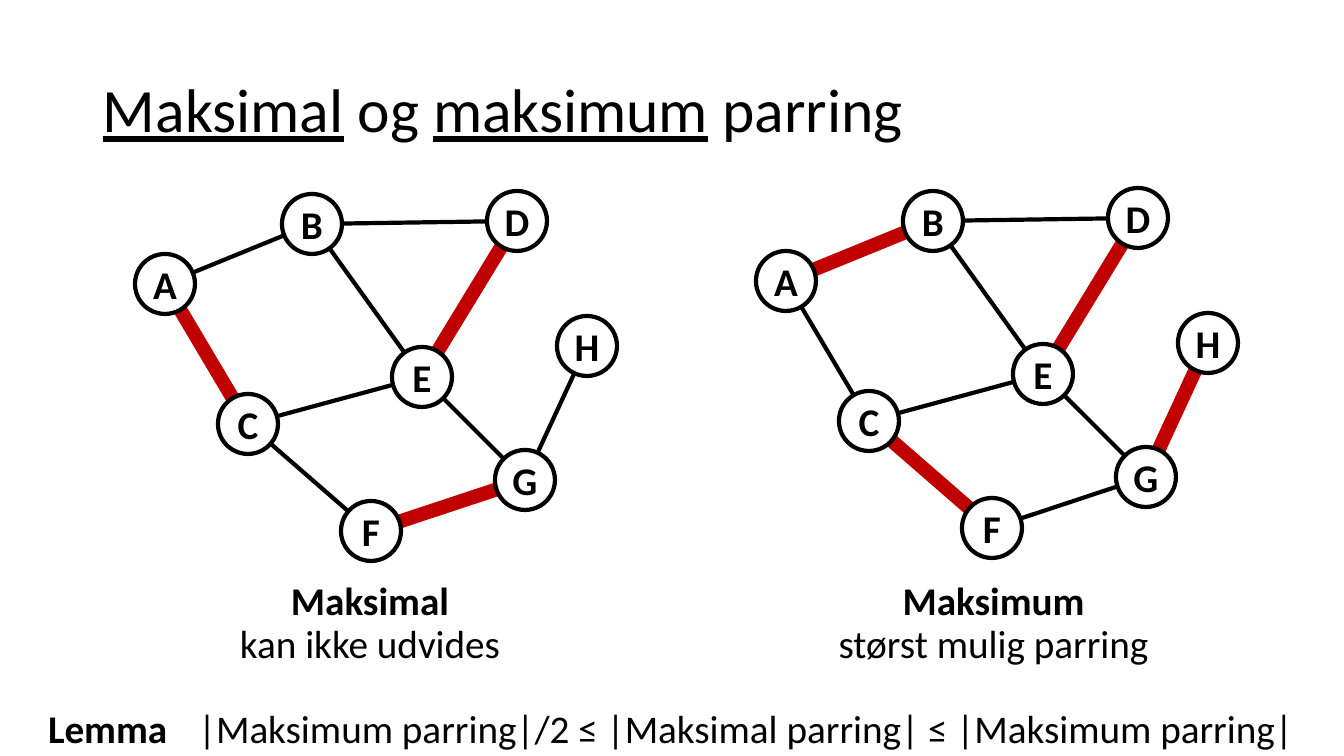
from lxml.etree import SubElement
from pptx import Presentation
from pptx.dml.color import RGBColor
from pptx.enum.shapes import MSO_CONNECTOR as Conn, MSO_SHAPE as Shape
from pptx.enum.text import MSO_ANCHOR as Anchor, PP_ALIGN as Align
from pptx.oxml.ns import qn
from pptx.util import Pt

TITLE = [("Maksimal", True), (" og ", False), ("maksimum", True), (" parring", False)]
LEMMA = [("Lemma", True), ("\t|Maksimum parring|/2 ≤ |Maksimal parring| ≤ |Maksimum parring|", False)]
NODES = {
    "A": (165, 284), "B": (312, 224), "C": (248, 424), "D": (517, 221),
    "E": (422, 377), "F": (371, 531), "G": (525, 480), "H": (587, 346),
}
EDGES = ["EC", "CA", "EB", "DB", "ED", "GH", "FC", "GF", "GE", "AB"]
GRAPHS = [
    {"shift": (0, 0), "match": ["CA", "ED", "GF"], "box": (159, 577, 422, 123),
     "note": ["Maksimal", "kan ikke udvides"]},
    {"shift": (621, -3), "match": ["AB", "ED", "FC", "GH"], "box": (787, 577, 413, 116),
     "note": ["Maksimum", "størst mulig parring"]},
]
COLORS = {"ink": "000000", "paper": "FFFFFF", "match": "C00000"}
FONT = "Calibri"
NODE = 60
PX = 914400 / 100.8


def px(*vals):
    return [round(v * PX) for v in vals]


def color(name):
    return RGBColor.from_string(COLORS[name])


def style(para, size=28, bold=None, align=Align.CENTER):
    para.alignment = align
    font = para.font
    font.name, font.size, font.bold = FONT, Pt(size), bold
    font.color.rgb = color("ink")


def add_box(slide, box):
    frame = slide.shapes.add_textbox(*px(*box)).text_frame
    frame.word_wrap = True
    return frame


def add_edge(group, start, end, hue, width):
    line = group.shapes.add_connector(Conn.STRAIGHT, *px(*start, *end))
    line.line.color.rgb = color(hue)
    line.line.width = Pt(width)
    SubElement(line._element.spPr, qn("a:effectLst"))


def add_node(group, name, spot):
    x, y = spot
    node = group.shapes.add_shape(Shape.OVAL, *px(x - NODE / 2, y - NODE / 2, NODE, NODE))
    node.shadow.inherit = False
    node.fill.solid()
    node.fill.fore_color.rgb = color("paper")
    node.line.color.rgb = color("ink")
    node.line.width = Pt(3)
    frame = node.text_frame
    frame.margin_left = frame.margin_right = frame.margin_top = frame.margin_bottom = 0
    frame.word_wrap = False
    frame.vertical_anchor = Anchor.MIDDLE
    frame.text = name
    style(frame.paragraphs[0], bold=True)


def add_graph(slide, graph):
    dx, dy = graph["shift"]
    spots = {name: (x + dx, y + dy) for name, (x, y) in NODES.items()}
    group = slide.shapes.add_group_shape()
    for edges, hue, width in ((EDGES, "ink", 3), (graph["match"], "match", 10)):
        for start, end in edges:
            add_edge(group, spots[start], spots[end], hue, width)
    for name, spot in spots.items():
        add_node(group, name, spot)
    frame = add_box(slide, graph["box"])
    frame.text = "\n".join(graph["note"])
    for para, bold in zip(frame.paragraphs, (True, False)):
        style(para, bold=bold)
        para.line_spacing = 0.9


def add_title(slide):
    frame = add_box(slide, (93, 40, 1159, 146))
    frame.vertical_anchor = Anchor.MIDDLE
    para = frame.paragraphs[0]
    style(para, 44, align=Align.LEFT)
    para.line_spacing = 0.9
    for text, under in TITLE:
        run = para.add_run()
        run.text, run.font.underline = text, under


def add_lemma(slide):
    frame = add_box(slide, (0, 699, 1344, 57))
    frame.margin_left, frame.margin_right = px(48, 0)
    para = frame.paragraphs[0]
    props = para._p.get_or_add_pPr()
    tabs = SubElement(props, qn("a:tabLst"))
    SubElement(tabs, qn("a:tab"), pos=str(px(150)[0]), algn="l")
    style(para, align=Align.LEFT)
    for text, bold in LEMMA:
        run = para.add_run()
        run.text, run.font.bold = text, bold


def main():
    deck = Presentation()
    deck.slide_width, deck.slide_height = px(1344, 756)
    slide = deck.slides.add_slide(deck.slide_layouts[6])
    add_title(slide)
    for graph in GRAPHS:
        add_graph(slide, graph)
    add_lemma(slide)
    deck.save("out.pptx")


if __name__ == "__main__":
    main()
